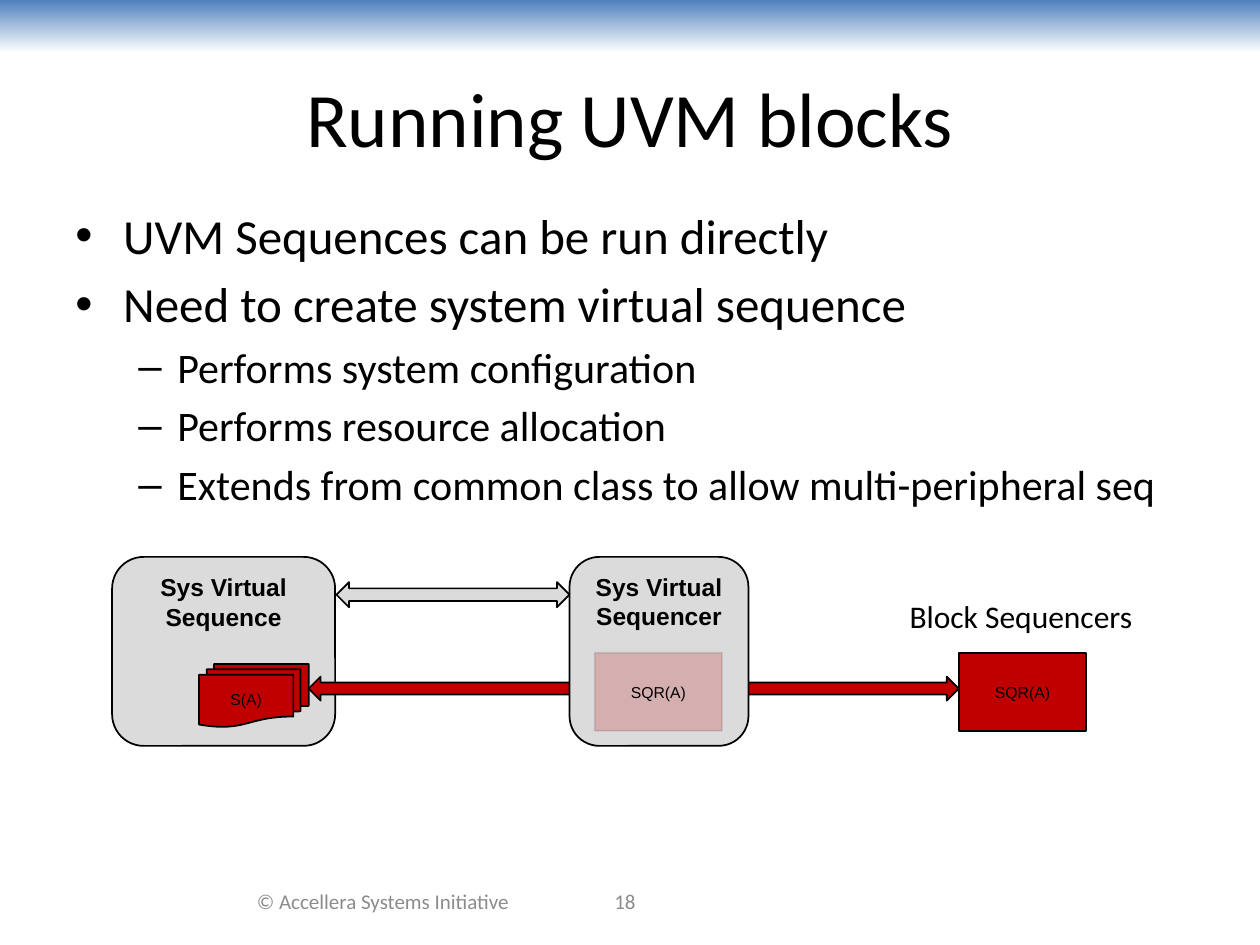
from lxml import etree
from pptx import Presentation
from pptx.dml.color import RGBColor
from pptx.enum.shapes import MSO_SHAPE
from pptx.enum.text import MSO_ANCHOR, PP_ALIGN
from pptx.oxml.ns import qn
from pptx.util import Inches, Pt

RECT = MSO_SHAPE.RECTANGLE
ROUND = MSO_SHAPE.ROUNDED_RECTANGLE
ARROW = MSO_SHAPE.LEFT_RIGHT_ARROW
DOCS = MSO_SHAPE.FLOWCHART_MULTIDOCUMENT
TOP, MIDDLE = MSO_ANCHOR.TOP, MSO_ANCHOR.MIDDLE
LEFT, CENTER = PP_ALIGN.LEFT, PP_ALIGN.CENTER
BLACK, WHITE, BLUE = "000000", "FFFFFF", "4F81BD"
GRAY, RED, FAINT = "DBDBDB", "C00000", "8C8C8C"
LEVELS = [("•", 0.38, 0.38, 28), ("–", 0.81, 0.31, 24)]
POINTS = [
    (0, "UVM Sequences can be run directly"),
    (0, "Need to create system virtual sequence"),
    (1, "Performs system configuration"),
    (1, "Performs resource allocation"),
    (1, "Extends from common class to allow multi-peripheral seq"),
]


def color(code):
    """Turn a hex string into a colour."""
    return RGBColor.from_string(code)


class Sketch:
    """Holds the style and the current slide."""

    def __init__(self, slide, head="Calibri", label="Arial"):
        self.shapes = slide.shapes
        self.head, self.label = head, label

    def style(self, para, size, face, code=BLACK, bold=False, align=LEFT):
        para.alignment = align
        for run in para.runs:
            font = run.font
            font.name, font.size, font.bold = face, Pt(size), bold
            font.color.rgb = color(code)

    def band(self, box):
        shape = self.shapes.add_shape(RECT, *map(Inches, box))
        shape.shadow.inherit = False
        shape.line.fill.background()
        shape.fill.gradient()
        shape.fill.gradient_angle = 270
        for stop, code, place in zip(shape.fill.gradient_stops, (BLUE, WHITE), (0, 1)):
            stop.color.rgb = color(code)
            stop.position = place

    def text(self, box, words, size, code=BLACK, anchor=MIDDLE, align=CENTER, wrap=True):
        frame = self.shapes.add_textbox(*map(Inches, box)).text_frame
        frame.word_wrap, frame.vertical_anchor = wrap, anchor
        frame.text = words
        self.style(frame.paragraphs[0], size, self.head, code, align=align)

    def points(self, box, items):
        frame = self.shapes.add_textbox(*map(Inches, box)).text_frame
        frame.word_wrap = True
        for i, (level, words) in enumerate(items):
            mark, left, hang, size = LEVELS[level]
            para = frame.add_paragraph() if i else frame.paragraphs[0]
            para.text, para.level = words, level
            if i:
                para.space_before = Pt(size * 0.2)
            props = para._p.get_or_add_pPr()
            props.set("marL", str(Inches(left)))
            props.set("indent", str(-Inches(hang)))
            etree.SubElement(props, qn("a:buFont")).set("typeface", self.label)
            etree.SubElement(props, qn("a:buChar")).set("char", mark)
            self.style(para, size, self.head)

    def shape(self, kind, box, fill, words="", size=9, bold=False, anchor=MIDDLE):
        shape = self.shapes.add_shape(kind, *map(Inches, box))
        shape.shadow.inherit = False
        shape.fill.solid()
        shape.fill.fore_color.rgb = color(fill)
        shape.line.color.rgb = color(BLACK)
        shape.line.width = Pt(1)
        if words:
            frame = shape.text_frame
            frame.text, frame.vertical_anchor = words, anchor
            self.style(frame.paragraphs[0], size, self.label, bold=bold, align=CENTER)
        return shape

    def fade(self, shape, fill, line):
        tones = shape._element.spPr.iter(qn("a:srgbClr"))
        for tone, part in zip(tones, (fill, line)):
            etree.SubElement(tone, qn("a:alpha")).set("val", str(part * 1000))


def main():
    deck = Presentation()
    deck.slide_width, deck.slide_height = Inches(10), Inches(7.5)
    art = Sketch(deck.slides.add_slide(deck.slide_layouts[6]))

    art.band((0, 0, 10, 0.42))
    art.text((0.5, 0.3, 9, 1.25), "Running UVM blocks", 44)
    art.points((0.5, 1.58, 9, 4.92), POINTS)
    art.text((1.83, 6.95, 2.42, 0.4), "© Accellera Systems Initiative", 12, FAINT)
    art.text((4, 6.95, 1.92, 0.4), "18", 12, FAINT)

    art.shape(ROUND, (0.89, 4.42, 1.77, 1.5), GRAY, "Sys Virtual Sequence", 14, True, TOP)
    art.shape(ARROW, (2.45, 5.37, 5.16, 0.19), RED)
    art.shape(ROUND, (4.52, 4.42, 1.42, 1.5), GRAY, "Sys Virtual Sequencer", 14, True, TOP)
    art.shape(RECT, (7.61, 5.18, 1.01, 0.62), RED, "SQR(A)")
    art.shape(DOCS, (1.58, 5.27, 0.87, 0.5), RED, "S(A)")
    ghost = art.shape(RECT, (4.72, 5.18, 1.01, 0.62), RED, "SQR(A)")
    art.fade(ghost, 20, 9)
    art.shape(ARROW, (2.67, 4.62, 1.85, 0.2), GRAY)
    art.text((7.12, 4.69, 1.99, 0.4), "Block Sequencers", 18, anchor=TOP, align=LEFT, wrap=False)

    deck.save("out.pptx")


if __name__ == "__main__":
    main()
